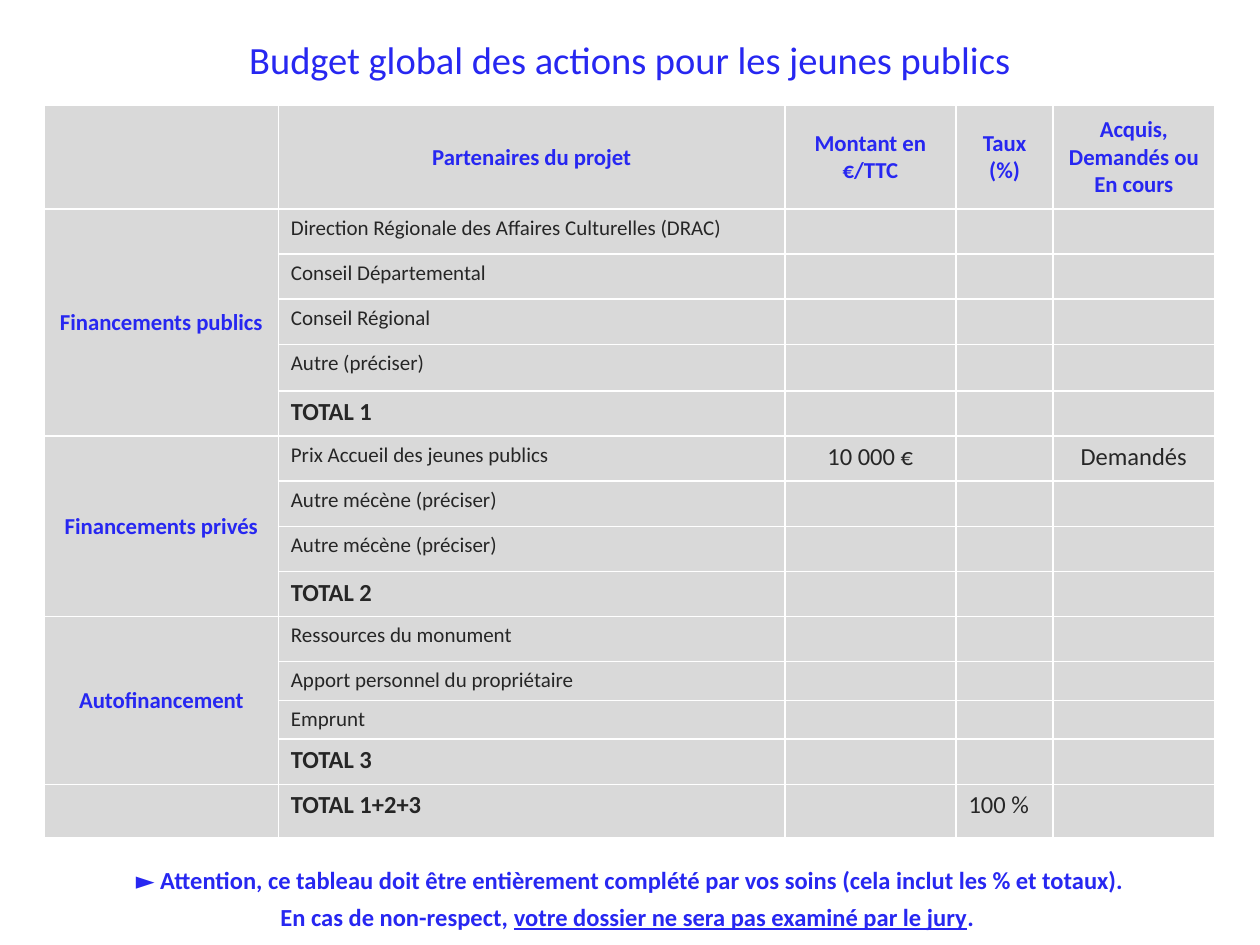
import lxml.etree
import pptx
import pptx.dml.color
import pptx.enum.text
import pptx.oxml.ns
import pptx.util

Cm = pptx.util.Cm
Pt = pptx.util.Pt
ALIGN = pptx.enum.text.PP_ALIGN
ANCHOR = pptx.enum.text.MSO_ANCHOR
qn = pptx.oxml.ns.qn

COLUMN_WIDTHS = [4.72, 10.21, 3.45, 1.96, 3.25]
HEADINGS = ["", "Partenaires du projet", "Montant en €/TTC", "Taux (%)",
            "Acquis, Demandés ou En cours"]
FUNDING = [
    ("Financements publics", [
        ("Direction Régionale des Affaires Culturelles (DRAC)", 0.91),
        ("Conseil Départemental", 0.91),
        ("Conseil Régional", 0.91),
        ("Autre (préciser)", 0.94),
        ("TOTAL 1", 0.91)]),
    ("Financements privés", [
        ("Prix Accueil des jeunes publics", 0.91),
        ("Autre mécène (préciser)", 0.91),
        ("Autre mécène (préciser)", 0.91),
        ("TOTAL 2", 0.91)]),
    ("Autofinancement", [
        ("Ressources du monument", 0.91),
        ("Apport personnel du propriétaire", 0.78),
        ("Emprunt", 0.78),
        ("TOTAL 3", 0.91)]),
    ("", [("TOTAL 1+2+3", 1.07)]),
]
ENTRIES = {
    ("Prix Accueil des jeunes publics", 2): ("10 000 €", ALIGN.CENTER),
    ("Prix Accueil des jeunes publics", 4): ("Demandés", ALIGN.CENTER),
    ("TOTAL 1+2+3", 3): ("100 %", ALIGN.LEFT),
}


def colour(value):
    return pptx.dml.color.RGBColor.from_string(value)


class BudgetPage:
    """Holds the style and the slide, and draws each kind of element."""

    font, blue, ink, grey, white = "Calibri", "2727F1", "262626", "D9D9D9", "FFFFFF"

    def __init__(self, deck):
        self.page = deck.slides.add_slide(deck.slide_layouts[6])

    def style(self, para, size, tint, bold=False, align=ALIGN.LEFT):
        para.alignment = align
        para.font.name = self.font
        para.font.size = Pt(size)
        para.font.bold = bold
        para.font.color.rgb = colour(tint)

    def text(self, left, top, width, height, lines, size, bold=False, anchor=ANCHOR.TOP):
        box = self.page.shapes.add_textbox(Cm(left), Cm(top), Cm(width), Cm(height))
        frame = box.text_frame
        frame.word_wrap = True
        frame.vertical_anchor = anchor
        for number, spans in enumerate(lines):
            para = frame.add_paragraph() if number else frame.paragraphs[0]
            self.style(para, size, self.blue, bold, ALIGN.CENTER)
            para.space_after = Pt(4 if len(lines) > 1 else 0)
            for words, underlined in spans:
                span = para.add_run()
                span.text = words
                if underlined:
                    span.font.underline = True

    def table(self, left, top, widths, heights):
        frame = self.page.shapes.add_table(len(heights), len(widths), Cm(left), Cm(top),
                                           Cm(sum(widths)), Cm(sum(heights)))
        table = frame.table
        table.first_row = table.horz_banding = False
        for column, width in zip(table.columns, widths):
            column.width = Cm(width)
        for row, height in zip(table.rows, heights):
            row.height = Cm(height)
        for cell in table.iter_cells():
            self.blank_cell(cell)
        return table

    def blank_cell(self, cell):
        properties = cell._tc.get_or_add_tcPr()
        for side in ("a:lnL", "a:lnR", "a:lnT", "a:lnB"):
            line = lxml.etree.SubElement(properties, qn(side), w=str(Pt(1)))
            fill = lxml.etree.SubElement(line, qn("a:solidFill"))
            lxml.etree.SubElement(fill, qn("a:srgbClr"), val=self.white)
        cell.fill.solid()
        cell.fill.fore_color.rgb = colour(self.grey)
        lxml.etree.SubElement(cell.text_frame.paragraphs[0]._p, qn("a:endParaRPr"), sz="1200")

    def label(self, cell, words):
        if words:
            cell.vertical_anchor = ANCHOR.MIDDLE
            cell.text = words
            self.style(cell.text_frame.paragraphs[0], 13, self.blue, True, ALIGN.CENTER)

    def entry(self, cell, words, size, bold=False, align=ALIGN.LEFT):
        cell.text = words
        self.style(cell.text_frame.paragraphs[0], size, self.ink, bold, align)


def main():
    deck = pptx.Presentation()
    deck.slide_width, deck.slide_height = Cm(25.4), Cm(19.05)
    budget = BudgetPage(deck)

    heights = [2.08] + [height for _, partners in FUNDING for _, height in partners]
    table = budget.table(0.89, 2.13, COLUMN_WIDTHS, heights)
    for column, heading in enumerate(HEADINGS):
        budget.label(table.cell(0, column), heading)
    row = 1
    for group, partners in FUNDING:
        first = table.cell(row, 0)
        if len(partners) > 1:
            first.merge(table.cell(row + len(partners) - 1, 0))
        budget.label(first, group)
        for partner, _ in partners:
            total = partner.startswith("TOTAL")
            budget.entry(table.cell(row, 1), partner, 14 if total else 12, total)
            for column in range(2, len(COLUMN_WIDTHS)):
                if (partner, column) in ENTRIES:
                    words, align = ENTRIES[partner, column]
                    budget.entry(table.cell(row, column), words, 14, align=align)
            row += 1

    budget.text(1.78, 17.32, 21.84, 1.63, [
        [("► Attention, ce tableau doit être entièrement complété par vos soins "
          "(cela inclut les % et totaux).", False)],
        [("En cas de non-respect, ", False),
         ("votre dossier ne sera pas examiné par le jury", True), (". ", False)],
    ], 14, bold=True)
    budget.text(0, 0.1, 25.4, 2.18,
                [[("Budget global des actions pour les jeunes publics", False)]],
                22, anchor=ANCHOR.MIDDLE)
    deck.save("out.pptx")


if __name__ == "__main__":
    main()
